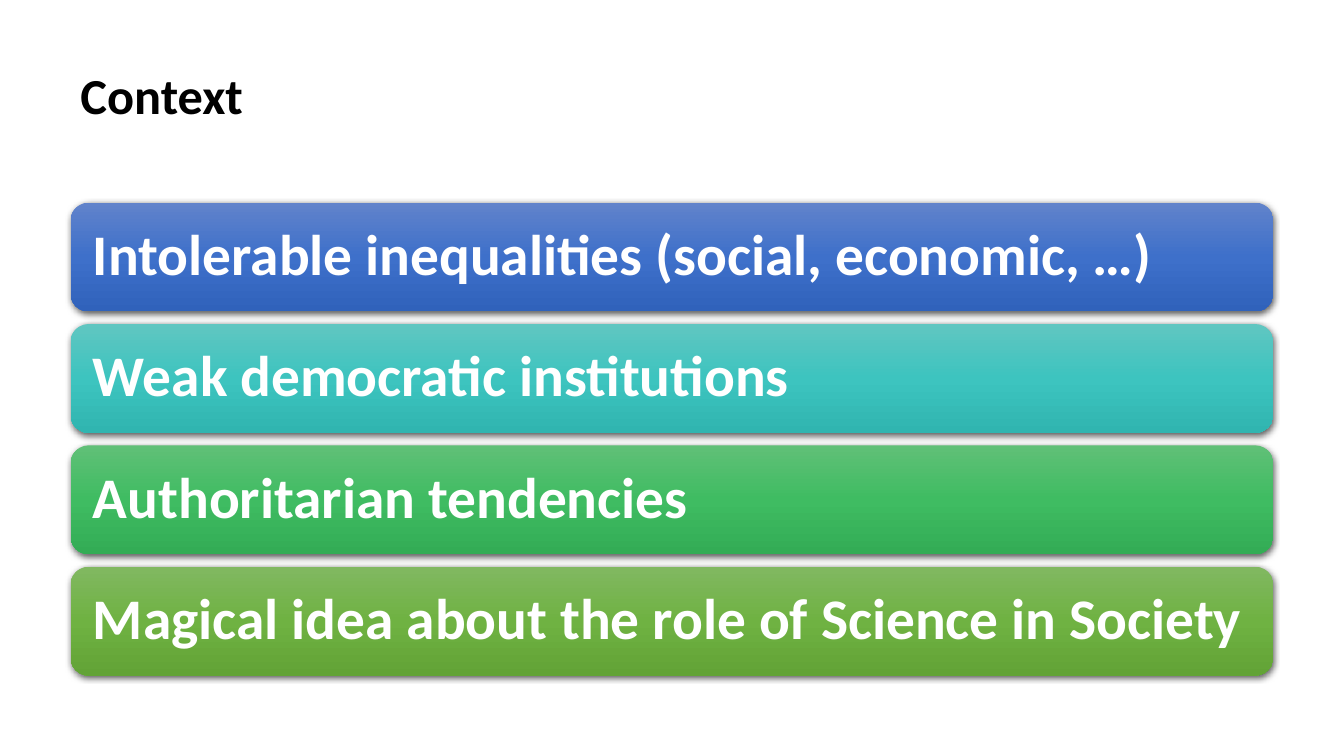
from copy import deepcopy
from lxml import etree
from pptx import Presentation
from pptx import util as u
from pptx.dml.color import RGBColor
from pptx.enum import shapes, text
from pptx.oxml.ns import qn

TITLE = "Context"
BARS = [
    ("Intolerable inequalities (social, economic, …)", ("6183CB", "3E70CA", "3062BB")),
    ("Weak democratic institutions", ("60C6C1", "3DC4BF", "30B5B0")),
    ("Authoritarian tendencies", ("60C077", "3FBC62", "33AC55")),
    ("Magical idea about the role of Science in Society", ("81B861", "6FB242", "62A336")),
]
LEFT, WIDTH = 0.7, 11.93
TOP, HIGH, STEP = 2.01, 1.08, 1.204


def paint(color, code):
    color.rgb = RGBColor.from_string(code)


def write(shape, words, size, code, pad, after):
    frame = shape.text_frame
    frame.word_wrap = True
    frame.vertical_anchor = text.MSO_ANCHOR.MIDDLE
    frame.margin_left = frame.margin_right = u.Inches(pad)
    frame.margin_top = frame.margin_bottom = u.Inches(pad)
    para = frame.paragraphs[0]
    para.alignment = text.PP_ALIGN.LEFT
    para.line_spacing = 0.9
    para.space_after = u.Pt(after)
    run = para.add_run()
    run.text = words
    run.font.name = "Calibri"
    run.font.size = u.Pt(size)
    run.font.bold = True
    paint(run.font.color, code)


def blend(shape, codes):
    fill = shape.fill
    fill.gradient()
    fill.gradient_angle = 270
    first = shape._element.spPr.find(".//" + qn("a:gs"))
    first.addnext(deepcopy(first))
    for stop, code, place in zip(fill.gradient_stops, codes, (0, 0.5, 1)):
        paint(stop.color, code)
        stop.position = place


def shade(shape):
    shape.shadow.inherit = False
    glow = shape._element.spPr.find(qn("a:effectLst"))
    outer = etree.SubElement(glow, qn("a:outerShdw"), blurRad=str(u.Pt(4.5)),
                             dist=str(u.Pt(1.5)), dir="5400000", algn="ctr", rotWithShape="0")
    black = etree.SubElement(outer, qn("a:srgbClr"), val="000000")
    etree.SubElement(black, qn("a:alpha"), val="63000")


def main():
    deck = Presentation()
    deck.slide_width, deck.slide_height = u.Inches(13.33), u.Inches(7.5)
    slide = deck.slides.add_slide(deck.slide_layouts[6])
    head = slide.shapes.add_textbox(*map(u.Inches, (LEFT, 0.35, WIDTH, 1.24)))
    write(head, TITLE, size=36, code="000000", pad=0.1, after=6)
    for row, (words, codes) in enumerate(BARS):
        box = map(u.Inches, (LEFT, TOP + row * STEP, WIDTH, HIGH))
        bar = slide.shapes.add_shape(shapes.MSO_SHAPE.ROUNDED_RECTANGLE, *box)
        blend(bar, codes)
        bar.line.fill.background()
        shade(bar)
        write(bar, words, size=41, code="FFFFFF", pad=0.17, after=0)
    deck.save("out.pptx")


if __name__ == "__main__":
    main()
